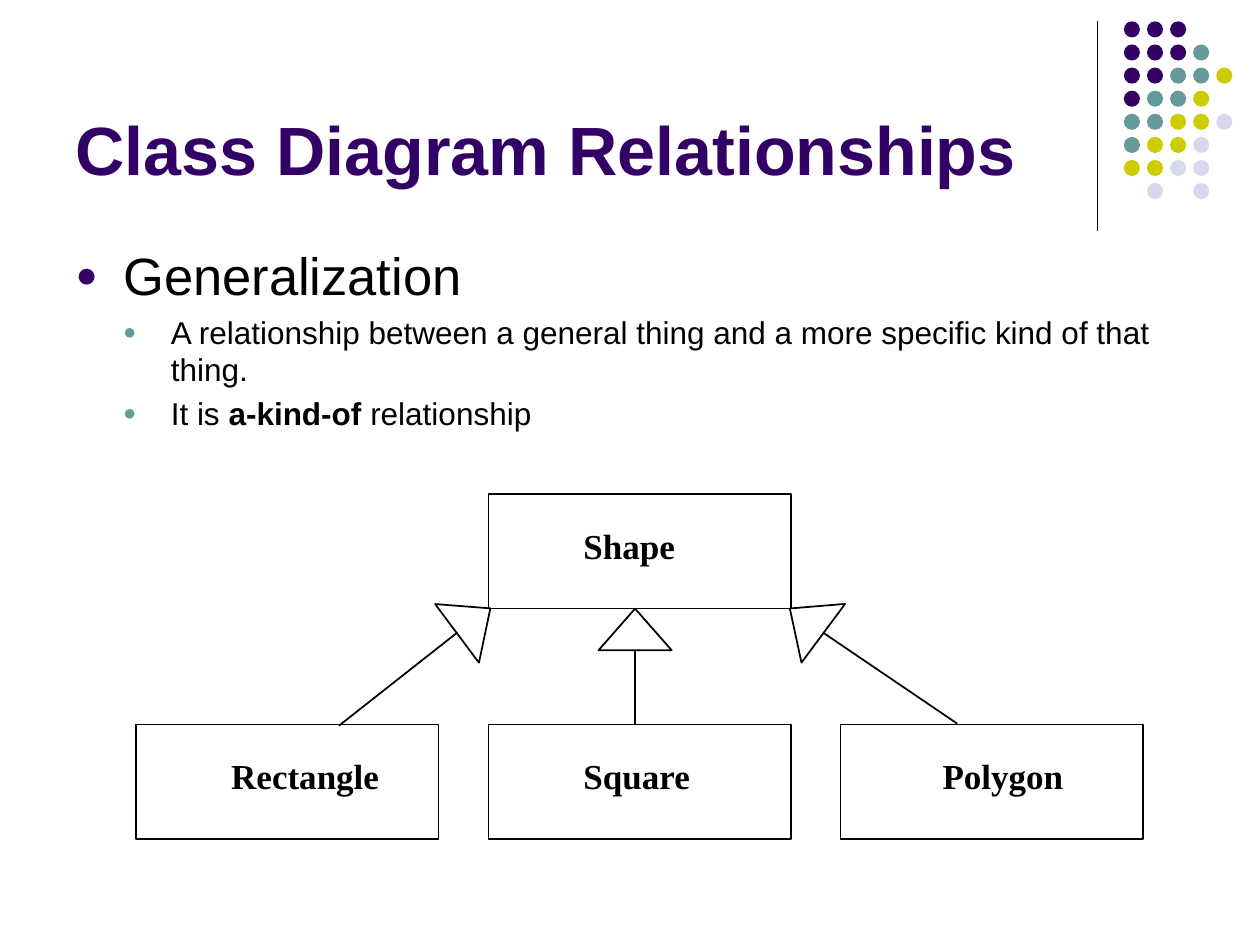
"""Build the class diagram slide that explains generalization."""
import pptx
import pptx.dml.color
import pptx.enum.shapes
import pptx.enum.text
import pptx.oxml
import pptx.oxml.ns
import pptx.util

Pt = pptx.util.Pt
SHAPES = pptx.enum.shapes.MSO_SHAPE
BLACK, WHITE, PURPLE, TEAL = "000000", "FFFFFF", "330066", "669999"
DOT_COLORS = {"P": PURPLE, "T": TEAL, "Y": "CCCC00", "L": "D8D8EC"}
DOT_ROWS = ["PPP", "PPPT", "PPTTY", "PTTY", "TTYYL", "TYYL", "YYLL", " L L"]
BOX_WIDTH, BOX_HEIGHT = 172.8, 65.5
BOX_LEFT, BOX_STEP = 77.8, 201.3
PARENT_TOP, CHILD_TOP = 282.2, 414


def rgb(color):
    """Turn a hex string into a colour."""
    return pptx.dml.color.RGBColor.from_string(color)


def place(part, left, top, width, height):
    """Move and size a part of the slide."""
    part.left, part.top = Pt(left), Pt(top)
    part.width, part.height = Pt(width), Pt(height)


def add_run(paragraph, text, size, color=BLACK, bold=False, font="Arial"):
    """Append one formatted run."""
    run = paragraph.add_run()
    run.text = text
    run.font.name, run.font.size, run.font.bold = font, Pt(size), bold
    run.font.color.rgb = rgb(color)


def add_figure(slide, kind, left, top, width, height, fill=WHITE, outline=None):
    """Add a flat preset shape with an optional outline."""
    figure = slide.shapes.add_shape(kind, Pt(left), Pt(top), Pt(width), Pt(height))
    figure.shadow.inherit = False
    figure.fill.solid()
    figure.fill.fore_color.rgb = rgb(fill)
    if outline:
        figure.line.color.rgb = rgb(outline)
        figure.line.width = Pt(1)
    else:
        figure.line.fill.background()
    return figure


def add_line(slide, start, end, width=1):
    """Add a straight black line without a shadow."""
    line = slide.shapes.add_connector(
        pptx.enum.shapes.MSO_CONNECTOR.STRAIGHT, *map(Pt, start + end))
    line.line.color.rgb = rgb(BLACK)
    line.line.width = Pt(width)
    properties = line._element.spPr
    properties.append(properties.makeelement(pptx.oxml.ns.qn("a:effectLst"), {}))


def add_dot_pattern(slide):
    """Add the corner pattern of dots and the rule beside it."""
    add_line(slide, (627.1, 12.2), (627.1, 131.8), 0.75)
    for row, codes in enumerate(DOT_ROWS):
        for column, code in enumerate(codes):
            if code in DOT_COLORS:
                add_figure(slide, SHAPES.OVAL, 642.2 + 13.2 * column,
                           12.2 + 13.2 * row, 9.2, 9.2, DOT_COLORS[code])


def fill_title(title):
    """Place the title and write its wording."""
    place(title, 36, 9.4, 594, 102.2)
    frame = title.text_frame
    frame.auto_size = pptx.enum.text.MSO_AUTO_SIZE.NONE
    frame.vertical_anchor = pptx.enum.text.MSO_ANCHOR.BOTTOM
    frame.paragraphs[0].alignment = pptx.enum.text.PP_ALIGN.LEFT
    add_run(frame.paragraphs[0], "Class Diagram Relationships", 39, PURPLE, True)


def format_bullet(paragraph, level, color):
    """Set the level, the hanging indent and the bullet of a paragraph."""
    paragraph.level = level
    properties = paragraph._p.get_or_add_pPr()
    properties.set("marL", str(Pt(27.2 * (level + 1))))
    properties.set("indent", str(-Pt(27.2)))
    namespace = pptx.oxml.ns.nsdecls("a")
    for xml in (f'<a:buClr {namespace}><a:srgbClr val="{color}"/></a:buClr>',
                f'<a:buSzPct {namespace} val="70000"/>',
                f'<a:buFont {namespace} typeface="Arial"/>',
                f'<a:buChar {namespace} char="●"/>'):
        properties.append(pptx.oxml.parse_xml(xml))


def fill_body(body):
    """Place the body and write its bulleted list."""
    place(body, 36, 135.4, 648, 347)
    frame = body.text_frame
    frame.auto_size = pptx.enum.text.MSO_AUTO_SIZE.NONE
    points = [
        (0, 30, PURPLE, [("Generalization", False)]),
        (1, 18, TEAL, [("A relationship between a general thing and a more "
                        "specific kind of that thing.", False)]),
        (1, 18, TEAL, [("It is ", False), ("a-kind-of ", True),
                       ("relationship", False)]),
    ]
    for index, (level, size, bullet_color, runs) in enumerate(points):
        paragraph = frame.add_paragraph() if index else frame.paragraphs[0]
        format_bullet(paragraph, level, bullet_color)
        for text, bold in runs:
            add_run(paragraph, text, size, bold=bold)


def add_class(slide, name, column, top, label_inset, label_width):
    """Add a class box and its name."""
    left = BOX_LEFT + BOX_STEP * column
    add_figure(slide, SHAPES.RECTANGLE, left, top, BOX_WIDTH, BOX_HEIGHT,
               outline=BLACK)
    label = slide.shapes.add_textbox(Pt(left + label_inset), Pt(top + 13.7),
                                     Pt(label_width), Pt(31))
    label.text_frame.word_wrap = False
    label.text_frame.auto_size = pptx.enum.text.MSO_AUTO_SIZE.SHAPE_TO_FIT_TEXT
    add_run(label.text_frame.paragraphs[0], name, 20, bold=True,
            font="Times New Roman")


def add_generalization(slide, left, top, rotation, start, end):
    """Add a line and the hollow triangle that points at the parent class."""
    triangle = add_figure(slide, SHAPES.ISOSCELES_TRIANGLE, left, top, 41.8, 23.8,
                          outline=BLACK)
    triangle.rotation = rotation
    add_line(slide, start, end)


def main():
    """Build and save the slide."""
    deck = pptx.Presentation()
    deck.slide_width, deck.slide_height = Pt(720), Pt(540)
    slide = deck.slides.add_slide(deck.slide_layouts[1])
    fill_title(slide.shapes.title)
    fill_body(slide.placeholders[1])
    add_dot_pattern(slide)

    add_class(slide, "Shape", 1, PARENT_TOP, 47.2, 68)
    add_class(slide, "Rectangle", 0, CHILD_TOP, 47.2, 101)
    add_class(slide, "Square", 1, CHILD_TOP, 47.2, 77)
    add_class(slide, "Polygon", 2, CHILD_TOP, 51.1, 85)

    add_generalization(slide, 342, 347.8, 0, (362.9, 372), (362.9, CHILD_TOP))
    add_generalization(slide, 440, 342.9, 306.6, (470.2, 361.4), (547, 413.5))
    add_generalization(slide, 249.8, 342.9, 53.2, (261.4, 361.4), (193.7, 414.7))
    deck.save("out.pptx")


if __name__ == "__main__":
    main()
